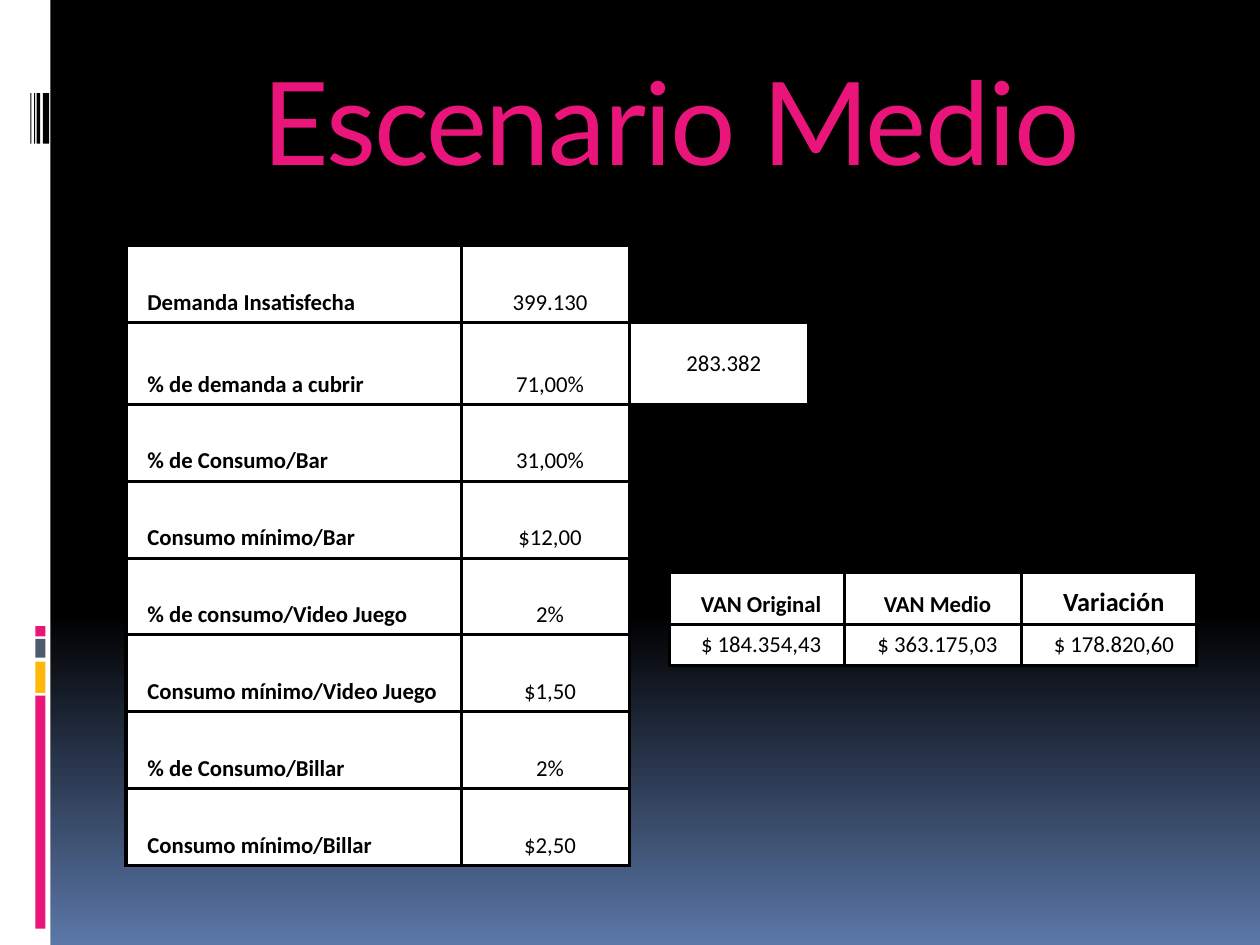
import copy

import pptx
import pptx.dml.color
import pptx.enum.shapes
import pptx.enum.text
import pptx.oxml
import pptx.oxml.ns
import pptx.util

Inches = pptx.util.Inches
Pt = pptx.util.Pt
RGBColor = pptx.dml.color.RGBColor
PP_ALIGN = pptx.enum.text.PP_ALIGN
MSO_ANCHOR = pptx.enum.text.MSO_ANCHOR

BLACK = RGBColor(0x00, 0x00, 0x00)
WHITE = RGBColor(0xFF, 0xFF, 0xFF)
PINK = RGBColor(0xEA, 0x15, 0x7A)
AMBER = RGBColor(0xFE, 0xB8, 0x0A)
SLATE = RGBColor(0x4E, 0x5B, 0x6F)
BLUE = RGBColor(0x5B, 0x77, 0xA8)

NO_GRID_STYLE = "{2D5ABB26-0587-4C30-8999-92F81FD0307C}"

TITLE = "Escenario Medio"
BACKDROP = [(0, BLACK), (0.65, BLACK), (1, BLUE)]
SIDE_BARS = [
    (0, 0, 0.4, 7.5, WHITE),
    (0.28, 5.52, 0.08, 1.85, PINK),
    (0.28, 5.25, 0.08, 0.25, AMBER),
    (0.28, 5.07, 0.08, 0.15, SLATE),
    (0.28, 4.97, 0.08, 0.08, PINK),
    (0.34, 0.74, 0.05, 0.4, BLACK),
    (0.29, 0.74, 0.03, 0.4, BLACK),
    (0.27, 0.74, 0.01, 0.4, BLACK),
    (0.24, 0.74, 0.01, 0.4, BLACK),
]
ASSUMPTIONS = [
    ("Demanda Insatisfecha", "399.130", ""),
    ("% de demanda a cubrir", "71,00%", "283.382"),
    ("% de Consumo/Bar", "31,00%", ""),
    ("Consumo mínimo/Bar", "$12,00", ""),
    ("% de consumo/Video Juego", "2%", ""),
    ("Consumo mínimo/Video Juego", "$1,50", ""),
    ("% de Consumo/Billar", "2%", ""),
    ("Consumo mínimo/Billar", "$2,50", ""),
]
VAN_RESULTS = [
    ("VAN Original", "VAN Medio", "Variación"),
    ("$ 184.354,43", "$ 363.175,03", "$ 178.820,60"),
]


def paint_backdrop(slide):
    fill = slide.background.fill
    fill.gradient()
    fill.gradient_angle = 270
    first = fill.gradient_stops[0]._gs
    first.addnext(copy.deepcopy(first))
    for stop, (position, color) in zip(fill.gradient_stops, BACKDROP):
        stop.position = position
        stop.color.rgb = color


def add_bar(slide, left, top, width, height, color):
    bar = slide.shapes.add_shape(
        pptx.enum.shapes.MSO_SHAPE.RECTANGLE,
        Inches(left), Inches(top), Inches(width), Inches(height))
    bar.shadow.inherit = False
    bar.fill.solid()
    bar.fill.fore_color.rgb = color
    bar.line.fill.background()


def set_title(slide):
    title = slide.shapes.title
    title.left, title.top = Inches(1), Inches(0.36)
    title.width, title.height = Inches(8.65), Inches(1.18)
    frame = title.text_frame
    frame.auto_size = pptx.enum.text.MSO_AUTO_SIZE.NONE
    frame.vertical_anchor = MSO_ANCHOR.MIDDLE
    frame.paragraphs[0].alignment = PP_ALIGN.CENTER
    run = frame.paragraphs[0].add_run()
    run.text = TITLE
    run.font.name = "Lato"
    run.font.size = Pt(66)
    run.font.color.rgb = PINK
    run._r.get_or_add_rPr().set("spc", "-100")


def add_borders(cell):
    properties = cell._tc.get_or_add_tcPr()
    for index, side in enumerate("LRTB"):
        properties.insert(index, pptx.oxml.parse_xml(
            f'<a:ln{side} {pptx.oxml.ns.nsdecls("a")} w="{Pt(2)}">'
            f'<a:solidFill><a:srgbClr val="{BLACK}"/></a:solidFill></a:ln{side}>'))


def write_cell(cell, text, bold, align, anchor, size):
    cell.fill.solid()
    cell.fill.fore_color.rgb = WHITE
    add_borders(cell)
    cell.vertical_anchor = anchor
    paragraph = cell.text_frame.paragraphs[0]
    paragraph.alignment = align
    indents = paragraph._p.get_or_add_pPr()
    indents.set("marL", str(Inches(0.45)))
    indents.set("indent", str(Inches(-0.38)))
    run = paragraph.add_run()
    run.text = text
    run.font.name = "Calibri"
    run.font.size = Pt(size)
    run.font.bold = bold
    run.font.color.rgb = BLACK


def add_grid(slide, left, top, widths, heights, rows, style_of):
    table = slide.shapes.add_table(
        len(rows), len(widths), Inches(left), Inches(top),
        Inches(sum(widths)), Inches(sum(heights))).table
    table.first_row = table.horz_banding = False
    table._tbl.tblPr.find(pptx.oxml.ns.qn("a:tableStyleId")).text = NO_GRID_STYLE
    for column, width in zip(table.columns, widths):
        column.width = Inches(width)
    for r, (height, values) in enumerate(zip(heights, rows)):
        table.rows[r].height = Inches(height)
        for c, value in enumerate(values):
            if value:
                write_cell(table.cell(r, c), value, *style_of(r, c))
            else:
                table.cell(r, c).fill.background()


def assumption_style(row, column):
    align = PP_ALIGN.CENTER if column else PP_ALIGN.LEFT
    anchor = MSO_ANCHOR.MIDDLE if column == 2 else MSO_ANCHOR.BOTTOM
    return column == 0, align, anchor, 13


def van_style(row, column):
    size = 15 if (row, column) == (0, 2) else 13
    return row == 0, PP_ALIGN.CENTER, MSO_ANCHOR.BOTTOM, size


def main():
    deck = pptx.Presentation()
    deck.slide_width, deck.slide_height = Inches(10), Inches(7.5)
    slide = deck.slides.add_slide(deck.slide_layouts[5])
    paint_backdrop(slide)
    for bar in SIDE_BARS:
        add_bar(slide, *bar)
    set_title(slide)
    add_grid(slide, 1, 1.95, [2.66, 1.34, 1.42], [0.61, 0.65] + [0.61] * 6,
             ASSUMPTIONS, assumption_style)
    add_grid(slide, 5.31, 4.54, [1.39, 1.41, 1.39], [0.42, 0.32],
             VAN_RESULTS, van_style)
    deck.save("out.pptx")


if __name__ == "__main__":
    main()
